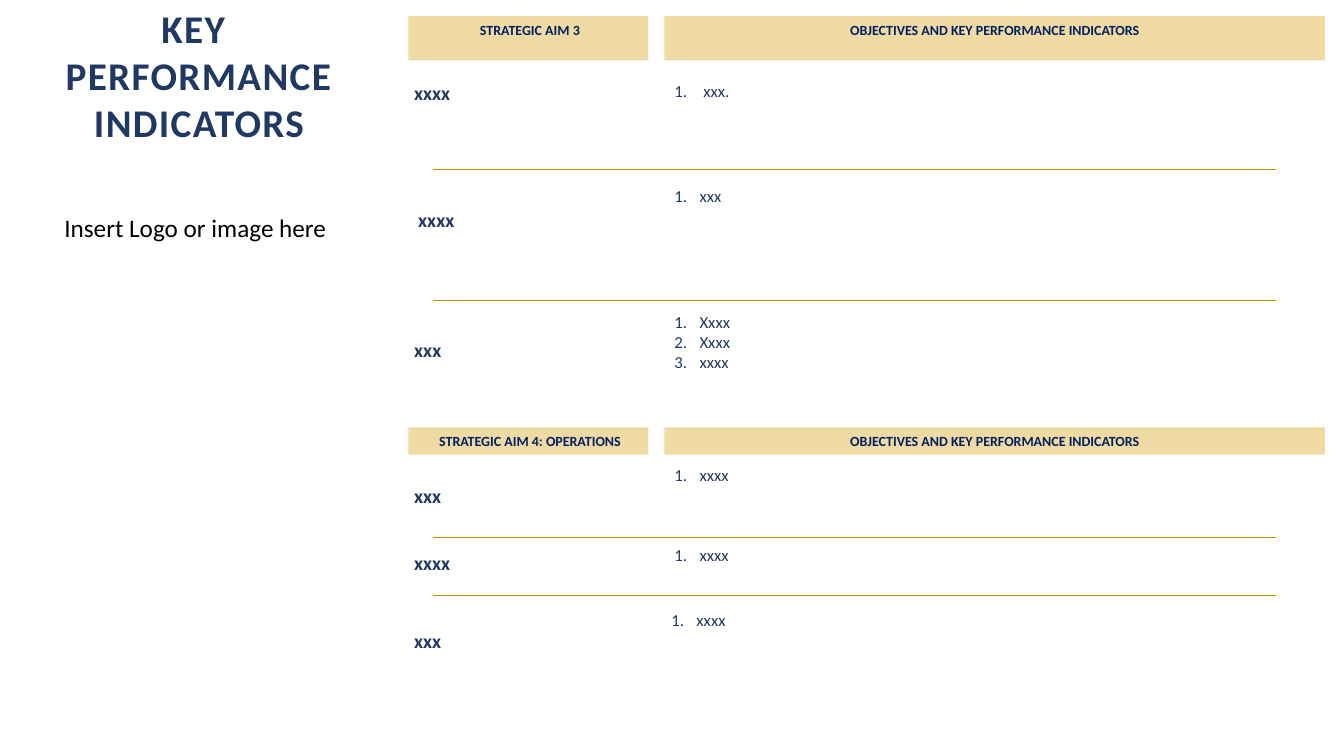
from lxml import etree
from pptx import Presentation
from pptx.dml.color import RGBColor
from pptx.enum import shapes, text
from pptx.oxml.ns import qn
from pptx.util import Inches, Pt

COLORS = {"navy": "203864", "header": "002060", "gold": "D69D07",
          "rule": "BF9000", "white": "FFFFFF", "black": "000000"}
LABEL_LEFT, LIST_LEFT = 4.01, 6.59
RULE_LEFT, RULE_RIGHT = 4.29, 12.66


def set_font(paragraph, size, color, bold=False):
    paragraph.font.name = "Calibri"
    paragraph.font.size = Pt(size)
    paragraph.font.bold = bold
    paragraph.font.color.rgb = RGBColor.from_string(COLORS[color])


def add_text(left, top, width, height, lines, size, color, bold=False):
    """Add a wrapping text box with one paragraph per line and return its paragraphs."""
    box = slide.shapes.add_textbox(Inches(left), Inches(top), Inches(width), Inches(height))
    box.text_frame.word_wrap = True
    box.text_frame.text = "\n".join(lines)
    for paragraph in box.text_frame.paragraphs:
        set_font(paragraph, size, color, bold)
    return box.text_frame.paragraphs


presentation = Presentation()
presentation.slide_width = Inches(13.33)
presentation.slide_height = Inches(7.5)
slide = presentation.slides.add_slide(presentation.slide_layouts[5])

# Title and logo prompt
title = slide.shapes.title
title.left, title.top = Inches(0.03), Inches(-0.01)
title.width, title.height = Inches(3.89), Inches(1.51)
title.fill.solid()
title.fill.fore_color.rgb = RGBColor.from_string(COLORS["white"])
title.text_frame.text = "KEY \vPERFORMANCE\vINDICATORS"
title.text_frame.auto_size = text.MSO_AUTO_SIZE.NONE
title.text_frame.vertical_anchor = text.MSO_ANCHOR.MIDDLE
heading = title.text_frame.paragraphs[0]
heading.alignment = text.PP_ALIGN.CENTER
set_font(heading, 28, "navy", bold=True)
for run in heading.runs:
    run.font._element.set("spc", "100")
add_text(0.54, 2.06, 2.9, 0.4, ["Insert Logo or image here"], 18, "black")

# Header bars: top, height, name of the aim
for top, height, aim in [(0.16, 0.44, " STRATEGIC AIM 3"),
                         (4.24, 0.27, " STRATEGIC AIM 4: OPERATIONS")]:
    for left, width, caption in [(4.05, 2.38, aim),
                                 (LIST_LEFT, 6.55, "OBJECTIVES AND KEY PERFORMANCE INDICATORS")]:
        bar = slide.shapes.add_shape(shapes.MSO_SHAPE.RECTANGLE, Inches(left), Inches(top),
                                     Inches(width), Inches(height))
        bar.shadow.inherit = False
        bar.line.fill.background()
        bar.fill.solid()
        bar.fill.fore_color.rgb = RGBColor.from_string(COLORS["gold"])
        gold = bar._element.spPr.find(qn("a:solidFill"))[0]
        etree.SubElement(gold, qn("a:alpha"), val="37000")
        bar.text_frame.word_wrap = True
        bar.text_frame.vertical_anchor = text.MSO_ANCHOR.TOP
        bar.text_frame.text = caption
        paragraph = bar.text_frame.paragraphs[0]
        paragraph.alignment = text.PP_ALIGN.CENTER
        set_font(paragraph, 10, "header", bold=True)

# Aim labels: left, top, width, height, text
for left, top, width, height, label in [
    (LABEL_LEFT, 0.75, 2.47, 0.56, "xxxx"),
    (4.05, 2.01, 2.37, 0.53, "xxxx"),
    (LABEL_LEFT, 3.3, 2.38, 0.47, "xxx"),
    (LABEL_LEFT, 4.75, 2.47, 0.57, "xxx"),
    (LABEL_LEFT, 5.42, 2.54, 0.57, "xxxx"),
    (LABEL_LEFT, 6.19, 2.13, 0.57, "xxx"),
]:
    add_text(left, top, width, height, [label], 14, "navy", bold=True)

# Numbered objectives: left, top, width, height, items
for left, top, width, height, items in [
    (LIST_LEFT, 0.75, 6.55, 1.02, [" xxx."]),
    (LIST_LEFT, 1.79, 6.55, 1.19, ["xxx"]),
    (LIST_LEFT, 3.04, 6.53, 1.12, ["Xxxx", "Xxxx", "xxxx"]),
    (LIST_LEFT, 4.56, 6.53, 0.71, ["xxxx"]),
    (LIST_LEFT, 5.36, 6.55, 0.5, ["xxxx"]),
    (6.56, 6, 6.53, 1.41, ["xxxx"]),
]:
    for paragraph in add_text(left, top, width, height, items, 12, "navy"):
        properties = paragraph._p.get_or_add_pPr()
        properties.set("marL", str(Inches(0.25)))
        properties.set("indent", str(Inches(-0.25)))
        numbering = etree.Element(qn("a:buAutoNum"), type="arabicPeriod")
        properties.insert(0, numbering)

# Rules between the rows
for top in (1.68, 2.98, 5.33, 5.9):
    rule = slide.shapes.add_connector(shapes.MSO_CONNECTOR.STRAIGHT, Inches(RULE_LEFT),
                                      Inches(top), Inches(RULE_RIGHT), Inches(top))
    rule.line.color.rgb = RGBColor.from_string(COLORS["rule"])
    rule.line.width = Pt(0.25)
    etree.SubElement(rule._element.spPr, qn("a:effectLst"))

presentation.save("out.pptx")
